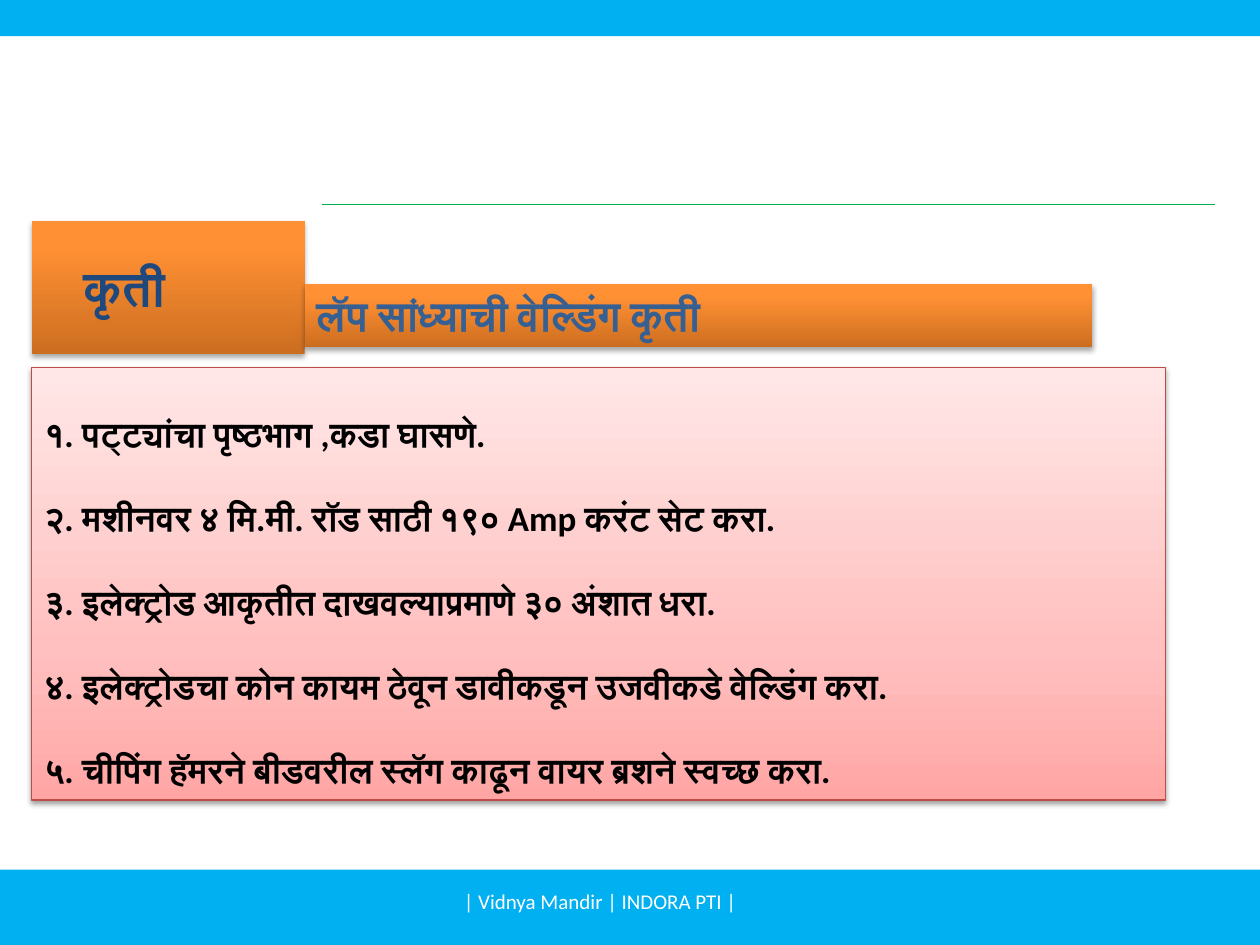
from copy import deepcopy
from lxml.etree import SubElement
from pptx import Presentation
from pptx.dml.color import RGBColor
from pptx.enum.shapes import MSO_CONNECTOR, MSO_SHAPE
from pptx.enum.text import MSO_ANCHOR, MSO_AUTO_SIZE, PP_ALIGN
from pptx.oxml.ns import qn
from pptx.util import Cm, Pt

SKY = RGBColor(0x00, 0xB0, 0xF0)
GREEN = RGBColor(0x00, 0xB0, 0x50)
NAVY = RGBColor(0x1F, 0x49, 0x7D)
BLUE = RGBColor(0x37, 0x60, 0x92)
RED = RGBColor(0xBF, 0x4C, 0x48)
BLACK = RGBColor(0, 0, 0)
WHITE = RGBColor(0xFF, 0xFF, 0xFF)
ORANGE = [(0, RGBColor(0xCC, 0x6E, 0x20)), (0.8, RGBColor(0xFF, 0x90, 0x34)),
          (1, RGBColor(0xFF, 0x91, 0x36))]
PINK = [(0, RGBColor(0xFF, 0xA6, 0xA5)), (0.35, RGBColor(0xFF, 0xC0, 0xBF)),
        (1, RGBColor(0xFF, 0xE7, 0xE7))]


def paint(box, stops, alpha, dist):
    """Give a box an upward gradient and a soft shadow below."""
    box.fill.gradient()
    box.fill.gradient_angle = 90
    group = box.element.spPr.find(".//" + qn("a:gsLst"))
    group.append(deepcopy(group[-1]))
    for stop, (place, color) in zip(box.fill.gradient_stops, stops):
        stop.position = place
        stop.color.rgb = color
    box.shadow.inherit = False
    glow = SubElement(box.element.spPr.find(qn("a:effectLst")), qn("a:outerShdw"),
                      blurRad=str(Pt(3.1)), dist=str(Pt(dist)), dir="5400000",
                      rotWithShape="0")
    tint = SubElement(glow, qn("a:srgbClr"), val="000000")
    SubElement(tint, qn("a:alpha"), val=str(alpha * 1000))


def write(box, lines, frame, para, font):
    """Fill a box with lines, formatted from three dicts of values."""
    text = box.text_frame
    text.text = "\n".join(lines)
    frame = {"word_wrap": True, "auto_size": MSO_AUTO_SIZE.NONE, **frame}
    for name, value in frame.items():
        setattr(text, name, value)
    for count, item in enumerate(text.paragraphs):
        for name, value in para.items():
            setattr(item, name, value)
        if count == 0:
            item.space_before = Pt(0)
        for run in item.runs:
            for name, value in font.items():
                if name == "color":
                    run.font.color.rgb = value
                else:
                    setattr(run.font, name, value)
            SubElement(run.font._element, qn("a:cs"), typeface=font["name"])


deck = Presentation()
deck.slide_width, deck.slide_height = Cm(25.4), Cm(19.05)
slide = deck.slides.add_slide(deck.slide_layouts[1])
shapes = slide.shapes
title, body = shapes.title, slide.placeholders[1]

# Bands at top and bottom
for top, high in ((0, 0.73), (17.53, 1.52)):
    band = shapes.add_shape(MSO_SHAPE.RECTANGLE, 0, Cm(top), Cm(25.4), Cm(high))
    band.shadow.inherit = False
    band.fill.solid()
    band.fill.fore_color.rgb = SKY
    band.line.fill.background()

# Green rule
rule = shapes.add_connector(MSO_CONNECTOR.STRAIGHT, Cm(6.5), Cm(4.12), Cm(24.5), Cm(4.12))
rule.line.color.rgb = GREEN
rule.line.width = Pt(0.75)
SubElement(rule.element.spPr, qn("a:effectLst"))

# Title block
title.left, title.top, title.width, title.height = Cm(0.64), Cm(4.45), Cm(5.5), Cm(2.68)
title.line.fill.background()
paint(title, ORANGE, 35, 1.8)
write(title, ["कृती"],
      {"vertical_anchor": MSO_ANCHOR.MIDDLE, "margin_left": Cm(1.05)},
      {"alignment": PP_ALIGN.LEFT},
      {"name": "Calibri", "size": Pt(28), "bold": True, "color": NAVY})

# Heading bar
head = shapes.add_shape(MSO_SHAPE.RECTANGLE, Cm(6.14), Cm(5.72), Cm(15.88), Cm(1.28))
head.line.fill.background()
paint(head, ORANGE, 35, 1.8)
write(head, ["लॅप सांध्याची वेल्डिंग कृती"],
      {"vertical_anchor": MSO_ANCHOR.TOP}, {"alignment": PP_ALIGN.LEFT},
      {"name": "Calibri", "size": Pt(24), "bold": True, "color": BLUE})

# Steps
body.left, body.top, body.width, body.height = Cm(0.64), Cm(7.41), Cm(22.86), Cm(8.72)
body.line.color.rgb = RED
body.line.width = Pt(0.75)
paint(body, PINK, 38, 1.6)
steps = ["१. पट्ट्यांचा पृष्ठभाग ,कडा घासणे.",
         "२. मशीनवर ४ मि.मी. रॉड साठी १९० Amp करंट सेट करा.",
         "३. इलेक्ट्रोड आकृतीत दाखवल्याप्रमाणे ३० अंशात धरा.",
         "४. इलेक्ट्रोडचा कोन कायम ठेवून डावीकडून उजवीकडे वेल्डिंग करा.",
         "५. चीपिंग हॅमरने बीडवरील स्लॅग काढून वायर ब्रशने स्वच्छ करा."]
for item in [body.text_frame]:
    item.text = ""
write(body, steps,
      {"vertical_anchor": MSO_ANCHOR.TOP, "margin_top": Cm(0.9)},
      {"alignment": PP_ALIGN.JUSTIFY, "space_before": Pt(24)},
      {"name": "Calibri", "size": Pt(20), "bold": True, "color": BLACK})
for item in body.text_frame.paragraphs:
    prop = item._p.get_or_add_pPr()
    prop.set("marL", "0")
    prop.set("indent", "0")
    SubElement(prop, qn("a:buNone"))

# Footer
foot = shapes.add_textbox(Cm(9.1), Cm(17.78), Cm(7.62), Cm(0.76))
write(foot, ["| Vidnya Mandir | INDORA PTI |"], {}, {"alignment": PP_ALIGN.LEFT},
      {"name": "Calibri", "size": Pt(12), "color": WHITE})

deck.save("out.pptx")
